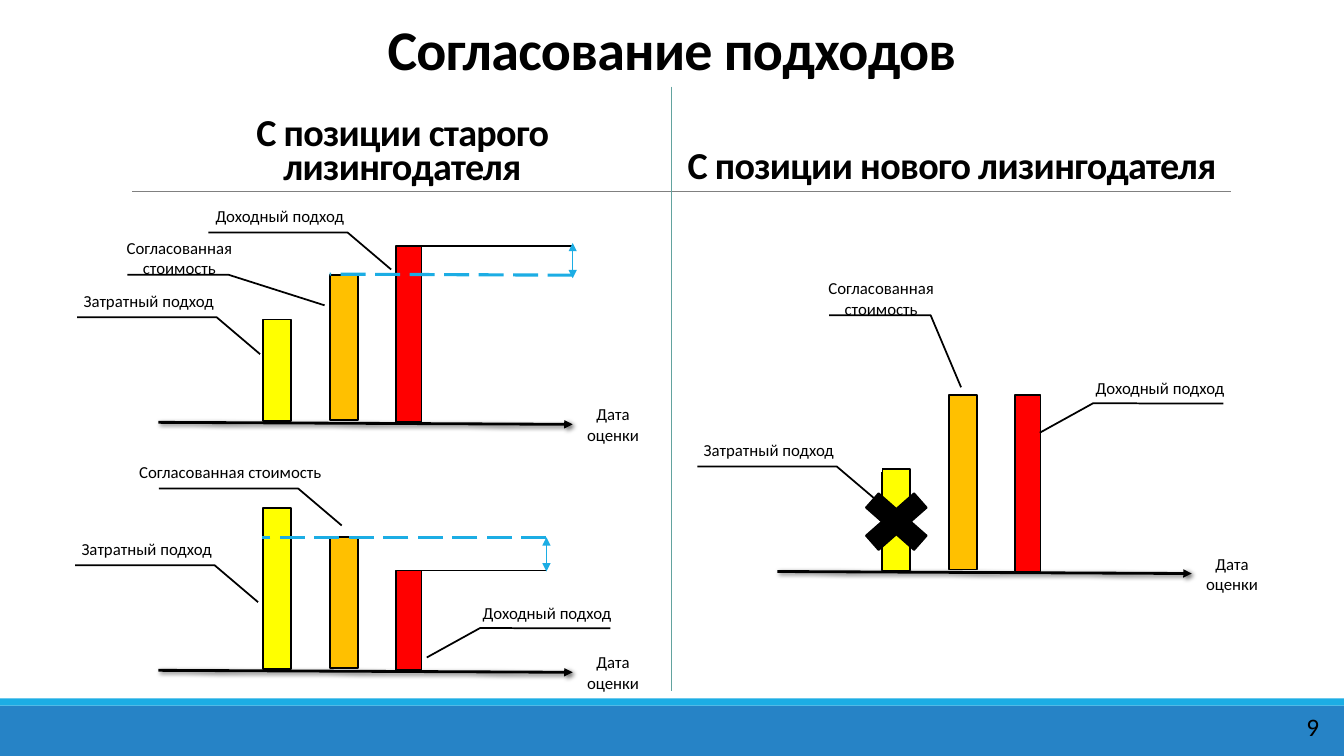
"""Builds the slide that compares valuation approaches for the old and the new lessor."""
from lxml.etree import SubElement
from pptx import Presentation
from pptx.dml.color import RGBColor
from pptx.enum.dml import MSO_LINE
from pptx.enum.shapes import MSO_CONNECTOR, MSO_SHAPE
from pptx.enum.text import MSO_ANCHOR, MSO_AUTO_SIZE, PP_ALIGN
from pptx.oxml.ns import qn
from pptx.util import Inches, Pt

THEME = {
    "font": "Calibri", "title": 40, "heading": 27.2, "number": 18, "label": 12,
    "black": "000000", "white": "FFFFFF", "grey": "808080", "teal": "62A39F",
    "blue": "2683C6", "sky": "1CADE4",
    "yellow": "FFFF00", "orange": "FFC000", "red": "FF0000",
}

prs = Presentation()
prs.slide_width, prs.slide_height = Inches(13.33), Inches(7.5)
COLS, ROWS = 133.3, 75
COL, ROW = prs.slide_width / COLS, prs.slide_height / ROWS
s = prs.slides.add_slide(prs.slide_layouts[5])


def draw(kind, x, y, w, h, fill=None, border=None, text="", size="label"):
    box = [int(v) for v in (x * COL, y * ROW, w * COL, h * ROW)]
    if kind is None:
        sp = s.shapes.add_textbox(*box)
    else:
        sp = s.shapes.add_shape(kind, *box)
        sp.shadow.inherit = False
        sp.fill.solid()
        sp.fill.fore_color.rgb = RGBColor.from_string(THEME[fill])
        if border:
            sp.line.color.rgb = RGBColor.from_string(THEME["black"])
            sp.line.width = Pt(border)
        else:
            sp.line.fill.background()
    if text:
        tf = sp.text_frame
        tf.word_wrap = True
        tf.text = text
        p = tf.paragraphs[0]
        p.alignment = PP_ALIGN.CENTER
        font = p.runs[0].font
        font.name, font.size = THEME["font"], Pt(THEME[size])
        font.color.rgb = RGBColor.from_string(THEME["black"])
    return sp


def line(x1, y1, x2, y2, color="black", width=1.25, ends=(), dash=None, shadow=False):
    c = s.shapes.add_connector(MSO_CONNECTOR.STRAIGHT, int(x1 * COL), int(y1 * ROW),
                               int(x2 * COL), int(y2 * ROW))
    c.line.color.rgb = RGBColor.from_string(THEME[color])
    c.line.width = Pt(width)
    if dash:
        c.line.dash_style = dash
    spPr = c.element.spPr
    for end in ends:
        SubElement(spPr.find(qn("a:ln")), qn(end), type="triangle")
    effects = SubElement(spPr, qn("a:effectLst"))
    if shadow:
        outer = SubElement(effects, qn("a:outerShdw"), blurRad=str(Pt(3)),
                           dist=str(Pt(2)), dir="2700000", rotWithShape="0")
        tint = SubElement(outer, qn("a:srgbClr"), val=THEME["black"])
        SubElement(tint, qn("a:alpha"), val="60000")


draw(MSO_SHAPE.RECTANGLE, 0, 70, COLS, 5, "blue")
draw(MSO_SHAPE.RECTANGLE, 0, 69.3, COLS, 0.7, "sky")
line(13.1, 19, 122.1, 19, "grey", 0.5)
draw(None, 127.1, 70.1, 6.2, 4, text="9", size="number")

title = s.shapes.title
title.left, title.top = 0, int(1.3 * ROW)
title.width, title.height = prs.slide_width, int(7.3 * ROW)
title.text_frame.text = "Согласование подходов"
old = draw(None, 13.1, 11.8, 53.6, 7.3, text="С позиции старого лизингодателя")
new = draw(None, 66.7, 11.7, 55.4, 7.3, text="С позиции нового лизингодателя")
for sp, size, spacing in ((title, "title", 0.85), (old, "heading", 0.75), (new, "heading", 0.75)):
    tf = sp.text_frame
    tf.word_wrap, tf.auto_size = True, MSO_AUTO_SIZE.NONE
    tf.vertical_anchor = MSO_ANCHOR.BOTTOM
    p = tf.paragraphs[0]
    p.alignment, p.line_spacing = PP_ALIGN.CENTER, spacing
    r = p.runs[0]
    r.font.name, r.font.size, r.font.bold = THEME["font"], Pt(THEME[size]), True
    r.font.color.rgb = RGBColor.from_string(THEME["black"])
    r.font.element.set("spc", "-50") if hasattr(r.font, "element") else r._r.get_or_add_rPr().set("spc", "-50")

COST, INCOME, AGREED = "Затратный подход", "Доходный подход", "Согласованная стоимость"
FROM_LEFT, FROM_RIGHT = (0.88, 0.185, 0.88, 0.799), (0.85, 0.78, 0.844, 0.205)
NEAR, RIGHT_TIP = (1.713, 0.991), (1.508, -0.03)
BARS = (("yellow", 10.35, 2.8, 0.1), ("orange", 17, 2.8, 0.2), ("red", 23.6, 2.5, 0))

charts = [
    {"x": 15.7, "axis": 41.9, "heights": (10.1, 14.4, 17.5),
     "callouts": [(COST, 3.5, 27.6, 22.5, FROM_LEFT + NEAR),
                  (AGREED, 9.6, 23.4, 16.4, FROM_LEFT + (1.567, 1.378)),
                  (INCOME, 16.5, 19.2, 22.5, FROM_LEFT + NEAR)],
     "gap": {"right": 56.8, "dash": (32.7, 27.3, 27.2), "solid": (41.8, 24.4), "arrow": (24.1, 27.6)}},
    {"x": 15.7, "axis": 66.5, "heights": (16, 13, 9.9),
     "callouts": [(COST, 3.3, 52.2, 22.5, FROM_LEFT + NEAR),
                  (AGREED, 11.6, 44.6, 22.5, FROM_LEFT + NEAR),
                  (INCOME, 43, 58.6, 22.5, FROM_RIGHT + RIGHT_TIP)],
     "gap": {"right": 54.2, "dash": (26, 53.3, 53.3), "solid": (39.3, 56.6), "arrow": (53.3, 56.7)}},
    {"x": 77.1, "axis": 56.7, "heights": (10.1, 17.3, 17.5),
     "callouts": [(COST, 65, 42.4, 22.5, FROM_LEFT + NEAR),
                  (AGREED, 79.2, 27.4, 16.4, FROM_LEFT + (2.505, 0.983)),
                  (INCOME, 103.8, 36.3, 22.5, FROM_RIGHT + RIGHT_TIP)]},
]

for chart in charts:
    x, axis = chart["x"], chart["axis"]
    line(x, axis, x + 41.1, axis + 0.2, width=2, ends=["a:tailEnd"], shadow=True)
    draw(None, x + 40.2, axis - 2.3, 9.8, 5, text="Дата оценки")
    for (color, shift, width, lift), height in zip(BARS, chart["heights"]):
        draw(MSO_SHAPE.RECTANGLE, x + shift, axis - lift - height, width, height, color, 1.25)
    for text, left, top, width, adjustments in chart["callouts"]:
        sp = draw(MSO_SHAPE.LINE_CALLOUT_2_NO_BORDER, left, top, width, 4.4, "white", 1.25, text)
        sp.text_frame.vertical_anchor = MSO_ANCHOR.MIDDLE
        for i, value in enumerate(adjustments):
            sp.adjustments[i] = value
    if "gap" in chart:
        gap = chart["gap"]
        right = gap["right"]
        left, start, end = gap["dash"]
        line(right, start, left, end, "sky", 2.25, dash=MSO_LINE.LONG_DASH)
        left, level = gap["solid"]
        line(right, level, left, level)
        top, bottom = gap["arrow"]
        line(right, top, right, bottom, "sky", 1, ["a:headEnd", "a:tailEnd"])

draw(MSO_SHAPE.MATH_MULTIPLY, 84.3, 47.7, 9.2, 8.1, "black", 1.25)
line(66.6, 8.6, 66.6, 68.6, "teal", 1)

prs.save("out.pptx")
